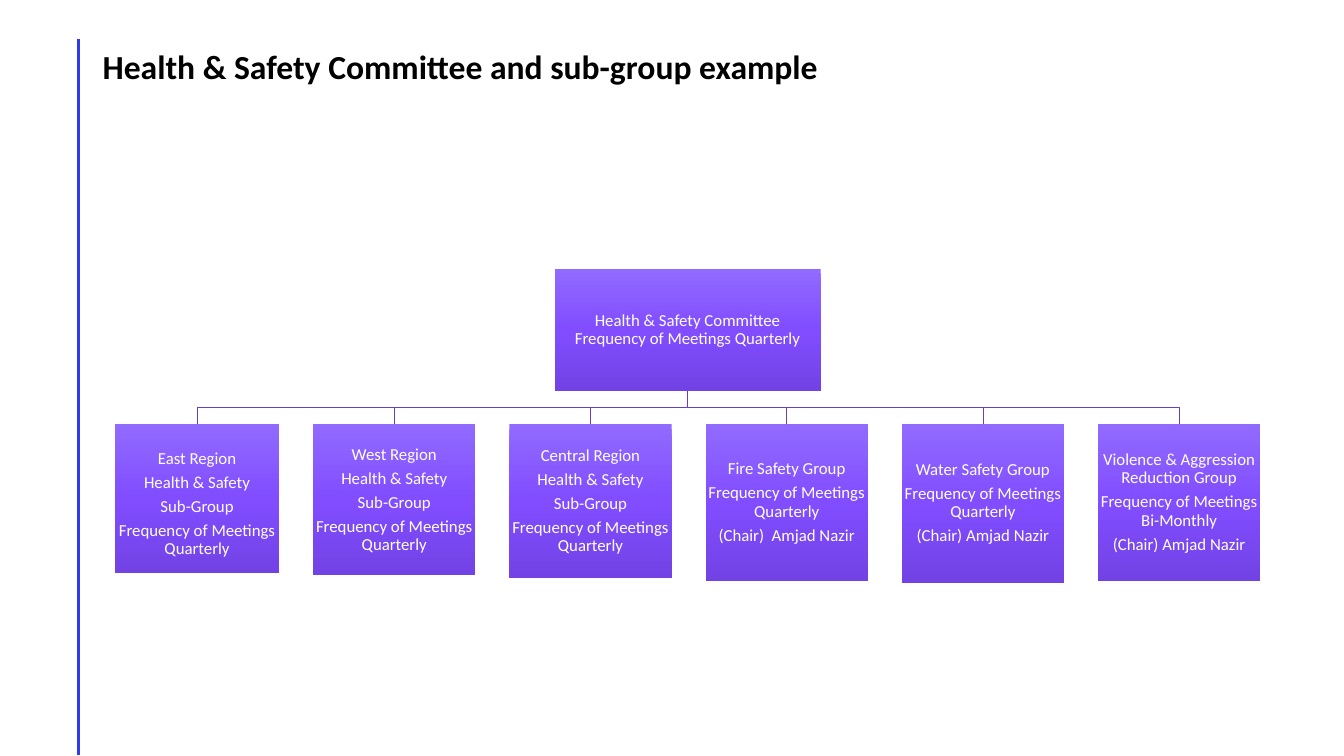
from copy import deepcopy
from dataclasses import dataclass

from pptx import Presentation
from pptx.dml.color import RGBColor
from pptx.enum.shapes import MSO_CONNECTOR, MSO_SHAPE
from pptx.enum.text import MSO_ANCHOR, PP_ALIGN
from pptx.oxml.ns import qn
from pptx.oxml.xmlchemy import OxmlElement
from pptx.util import Inches, Pt


@dataclass(frozen=True)
class Theme:
    """Colours, font and type sizes."""
    font: str = "Calibri"
    title: int = 24
    body: int = 12
    ink: str = "000000"
    light: str = "FFFFFF"
    rule: str = "2E3CEB"
    link: str = "673ECC"
    shades: tuple = ("916AFF", "814DFF", "7242E5")


class Chart:
    """Draws the parts of an organisation chart on one slide."""

    def __init__(self, slide, theme):
        self.shapes = slide.shapes
        self.theme = theme

    def run(self, para, text, size, color, bold=False):
        """Add one styled run."""
        run = para.add_run()
        run.text = text
        run.font.name = self.theme.font
        run.font.size = Pt(size)
        run.font.bold = bold
        run.font.color.rgb = RGBColor.from_string(color)

    def title(self, text, left, top, width, height):
        """Add the slide heading."""
        frame = self.shapes.add_textbox(
            Inches(left), Inches(top), Inches(width), Inches(height)).text_frame
        frame.word_wrap = True
        para = frame.paragraphs[0]
        para.line_spacing = 1.07
        para.space_after = Pt(8)
        self.run(para, text, self.theme.title, self.theme.ink, True)

    def rule(self, x, top, end):
        """Add the upright margin line."""
        line = self.shapes.add_connector(
            MSO_CONNECTOR.STRAIGHT, Inches(x), Inches(top), Inches(x), Inches(end))
        line.line.color.rgb = RGBColor.from_string(self.theme.rule)
        line.line.width = Pt(2)
        line._element.spPr.append(OxmlElement("a:effectLst"))

    def link(self, start, end):
        """Add an elbow line that turns halfway down."""
        (x, top), (goal, low) = start, end
        mid = (top + low) / 2
        points = [(x, mid), (goal, mid), (goal, low)]
        pen = self.shapes.build_freeform(Inches(x), Inches(top))
        pen.add_line_segments(
            [(Inches(a), Inches(b)) for a, b in points], close=False)
        shape = pen.convert_to_shape()
        shape.shadow.inherit = False
        shape.fill.background()
        shape.line.color.rgb = RGBColor.from_string(self.theme.link)
        shape.line.width = Pt(0.5)

    def shade(self, shape):
        """Fill a shape with the three-stop gradient."""
        shape.fill.gradient()
        shape.fill.gradient_angle = 270
        stops = shape._element.spPr.find(".//" + qn("a:gsLst"))
        stops.append(deepcopy(stops[0]))
        for i, stop in enumerate(shape.fill.gradient_stops):
            stop.position = i / 2
            stop.color.rgb = RGBColor.from_string(self.theme.shades[i])

    def box(self, paras, left, top, width, height, inset=0.01):
        """Add a box with one paragraph per entry."""
        shape = self.shapes.add_shape(
            MSO_SHAPE.RECTANGLE, Inches(left), Inches(top),
            Inches(width), Inches(height))
        shape.shadow.inherit = False
        shape.line.fill.background()
        self.shade(shape)
        frame = shape.text_frame
        frame.word_wrap = True
        frame.vertical_anchor = MSO_ANCHOR.MIDDLE
        frame.margin_left = frame.margin_right = frame.margin_bottom = Inches(0.01)
        frame.margin_top = Inches(inset)
        for i, text in enumerate(paras):
            para = frame.add_paragraph() if i else frame.paragraphs[0]
            para.alignment = PP_ALIGN.CENTER
            para.line_spacing = 0.9
            para.space_after = Pt(4.2)
            for j, line in enumerate(text.split("\n")):
                if j:
                    para.add_line_break()
                self.run(para, line, self.theme.body, self.theme.light)


REGION = ["Health & Safety", "Sub-Group", "Frequency of Meetings Quarterly"]
GROUPS = [
    (1.63, 1.48, 0.11, ["East Region", *REGION]),
    (1.61, 1.5, 0.01, ["West Region", *REGION]),
    (1.61, 1.53, 0.01, ["Central Region", *REGION]),
    (1.61, 1.55, 0.01, ["Fire Safety Group", "Frequency of Meetings Quarterly",
                        "(Chair)  Amjad Nazir"]),
    (1.61, 1.57, 0.01, ["Water Safety Group", "Frequency of Meetings Quarterly",
                        "(Chair) Amjad Nazir"]),
    (1.61, 1.55, 0.01, ["Violence & Aggression Reduction Group",
                        "Frequency of Meetings Bi-Monthly", "(Chair) Amjad Nazir"]),
]


def main():
    """Build and save the slide."""
    deck = Presentation()
    deck.slide_width, deck.slide_height = Inches(13.33), Inches(7.5)
    chart = Chart(deck.slides.add_slide(deck.slide_layouts[6]), Theme())
    chart.rule(0.78, 0.39, 7.49)

    left, right, top = 1.14, 12.5, 4.21
    gap = (right - left - sum(group[0] for group in GROUPS)) / (len(GROUPS) - 1)
    for width, height, inset, paras in GROUPS:
        chart.link((6.82, 3.87), (left + width / 2, top))
        chart.box(paras, left, top, width, height, inset)
        left += width + gap
    chart.box(["Health & Safety Committee\nFrequency of Meetings Quarterly"],
              5.5, 2.67, 2.64, 1.21)
    chart.title("Health & Safety Committee and sub-group example",
                0.92, 0.38, 8.13, 0.51)
    deck.save("out.pptx")


if __name__ == "__main__":
    main()
